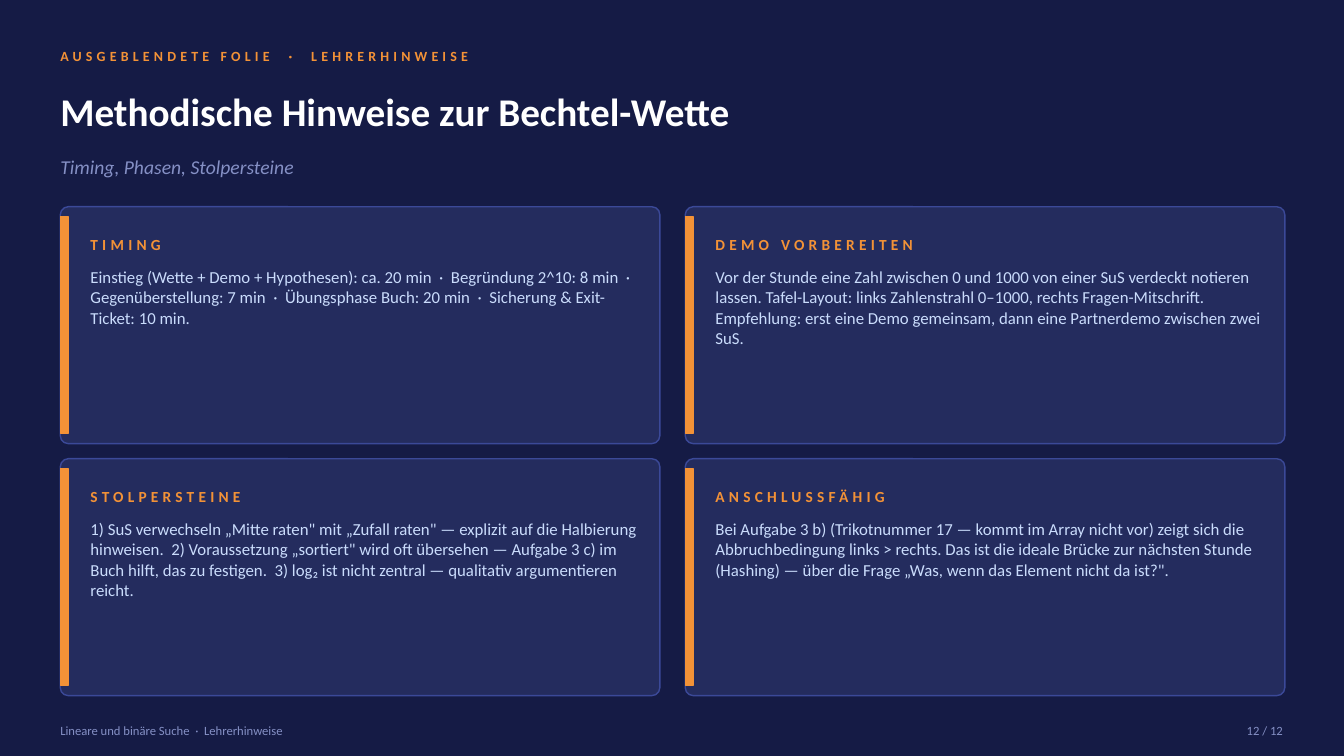
from dataclasses import dataclass

from pptx import Presentation
from pptx.dml.color import RGBColor
from pptx.enum.shapes import MSO_SHAPE
from pptx.enum.text import MSO_ANCHOR, MSO_AUTO_SIZE, PP_ALIGN
from pptx.util import Cm, Pt


@dataclass(frozen=True)
class TextStyle:
    size: float
    color: str
    bold: bool = False
    italic: bool = False
    spacing: float = 0


@dataclass(frozen=True)
class Theme:
    font: str = "Calibri"
    background: str = "151B45"
    card: str = "242C5E"
    card_edge: str = "3B4998"
    accent: str = "F39237"
    kicker: TextStyle = TextStyle(10, "F39237", bold=True, spacing=3)
    title: TextStyle = TextStyle(28, "FFFFFF", bold=True)
    subtitle: TextStyle = TextStyle(14, "8590C5", italic=True)
    heading: TextStyle = TextStyle(11, "F39237", bold=True, spacing=3)
    body: TextStyle = TextStyle(12, "CADCFC")
    footer: TextStyle = TextStyle(9, "8590C5")


class SlideBuilder:
    def __init__(self, slide, theme):
        self.slide = slide
        self.theme = theme
        fill = slide.background.fill
        fill.solid()
        fill.fore_color.rgb = RGBColor.from_string(theme.background)

    def set_text(self, holder, text, style, anchor=MSO_ANCHOR.MIDDLE, align=PP_ALIGN.LEFT):
        frame = holder.text_frame
        frame.word_wrap = True
        frame.auto_size = MSO_AUTO_SIZE.NONE
        frame.vertical_anchor = anchor
        frame.margin_left = frame.margin_right = 0
        frame.margin_top = frame.margin_bottom = 0
        paragraph = frame.paragraphs[0]
        paragraph.alignment = align
        run = paragraph.add_run()
        run.text = text
        font = run.font
        font.name = self.theme.font
        font.size = Pt(style.size)
        font.bold = style.bold
        font.italic = style.italic
        font.color.rgb = RGBColor.from_string(style.color)
        if style.spacing:
            run._r.get_or_add_rPr().set("spc", str(int(style.spacing * 100)))

    def title(self, text, left, top, width, height):
        holder = self.slide.shapes.title
        holder.left, holder.top = Cm(left), Cm(top)
        holder.width, holder.height = Cm(width), Cm(height)
        self.set_text(holder, text, self.theme.title)

    def text(self, text, style, left, top, width, height, **layout):
        holder = self.slide.shapes.add_textbox(Cm(left), Cm(top), Cm(width), Cm(height))
        self.set_text(holder, text, style, **layout)

    def box(self, kind, left, top, width, height, fill, edge):
        shape = self.slide.shapes.add_shape(kind, Cm(left), Cm(top), Cm(width), Cm(height))
        shape.shadow.inherit = False
        shape.fill.solid()
        shape.fill.fore_color.rgb = RGBColor.from_string(fill)
        shape.line.color.rgb = RGBColor.from_string(edge)
        shape.line.width = Pt(1)
        return shape

    def card(self, heading, body, left, top, width, height):
        theme = self.theme
        panel = self.box(MSO_SHAPE.ROUNDED_RECTANGLE, left, top, width, height,
                         theme.card, theme.card_edge)
        panel.adjustments[0] = 0.034
        self.box(MSO_SHAPE.RECTANGLE, left, top + 0.25, 0.2, height - 0.51,
                 theme.accent, theme.accent)
        text_left, text_width = left + 0.76, width - 1.27
        self.text(heading, theme.heading, text_left, top + 0.51, text_width, 0.89)
        self.text(body, theme.body, text_left, top + 1.52, text_width, 4.06,
                  anchor=MSO_ANCHOR.TOP)


MARGIN, CONTENT_WIDTH = 1.52, 30.81
CARDS_TOP, CARD_WIDTH, CARD_HEIGHT = 5.21, 15.11, 5.97
COLUMN_GAP, ROW_GAP = 0.64, 0.38

HINTS = [
    ("TIMING",
     "Einstieg (Wette + Demo + Hypothesen): ca. 20 min  ·  Begründung 2^10: 8 min  ·  "
     "Gegenüberstellung: 7 min  ·  Übungsphase Buch: 20 min  ·  "
     "Sicherung & Exit-Ticket: 10 min."),
    ("DEMO VORBEREITEN",
     "Vor der Stunde eine Zahl zwischen 0 und 1000 von einer SuS verdeckt notieren lassen. "
     "Tafel-Layout: links Zahlenstrahl 0–1000, rechts Fragen-Mitschrift. Empfehlung: "
     "erst eine Demo gemeinsam, dann eine Partnerdemo zwischen zwei SuS."),
    ("STOLPERSTEINE",
     '1) SuS verwechseln „Mitte raten" mit „Zufall raten" — explizit auf die Halbierung '
     'hinweisen.  2) Voraussetzung „sortiert" wird oft übersehen — Aufgabe 3 c) im Buch '
     "hilft, das zu festigen.  3) log₂ ist nicht zentral — qualitativ argumentieren reicht."),
    ("ANSCHLUSSFÄHIG",
     "Bei Aufgabe 3 b) (Trikotnummer 17 — kommt im Array nicht vor) zeigt sich die "
     "Abbruchbedingung links > rechts. Das ist die ideale Brücke zur nächsten Stunde "
     '(Hashing) — über die Frage „Was, wenn das Element nicht da ist?".'),
]


def main():
    deck = Presentation()
    deck.slide_width, deck.slide_height = Cm(33.87), Cm(19.05)
    theme = Theme()
    builder = SlideBuilder(deck.slides.add_slide(deck.slide_layouts[5]), theme)

    # Header
    builder.text("AUSGEBLENDETE FOLIE  ·  LEHRERHINWEISE", theme.kicker,
                 MARGIN, 1.02, CONTENT_WIDTH, 0.76)
    builder.title("Methodische Hinweise zur Bechtel-Wette", MARGIN, 1.9, CONTENT_WIDTH, 1.78)
    builder.text("Timing, Phasen, Stolpersteine", theme.subtitle,
                 MARGIN, 3.68, CONTENT_WIDTH, 1.02)

    # Two-by-two grid of hint cards
    for index, (heading, body) in enumerate(HINTS):
        row, column = divmod(index, 2)
        builder.card(heading, body,
                     MARGIN + column * (CARD_WIDTH + COLUMN_GAP),
                     CARDS_TOP + row * (CARD_HEIGHT + ROW_GAP),
                     CARD_WIDTH, CARD_HEIGHT)

    # Footer
    builder.text("Lineare und binäre Suche  ·  Lehrerhinweise", theme.footer,
                 MARGIN, 18.03, 20.32, 0.76)
    builder.text("12 / 12", theme.footer, 30.3, 18.03, 2.03, 0.76, align=PP_ALIGN.RIGHT)

    deck.save("out.pptx")


if __name__ == "__main__":
    main()
